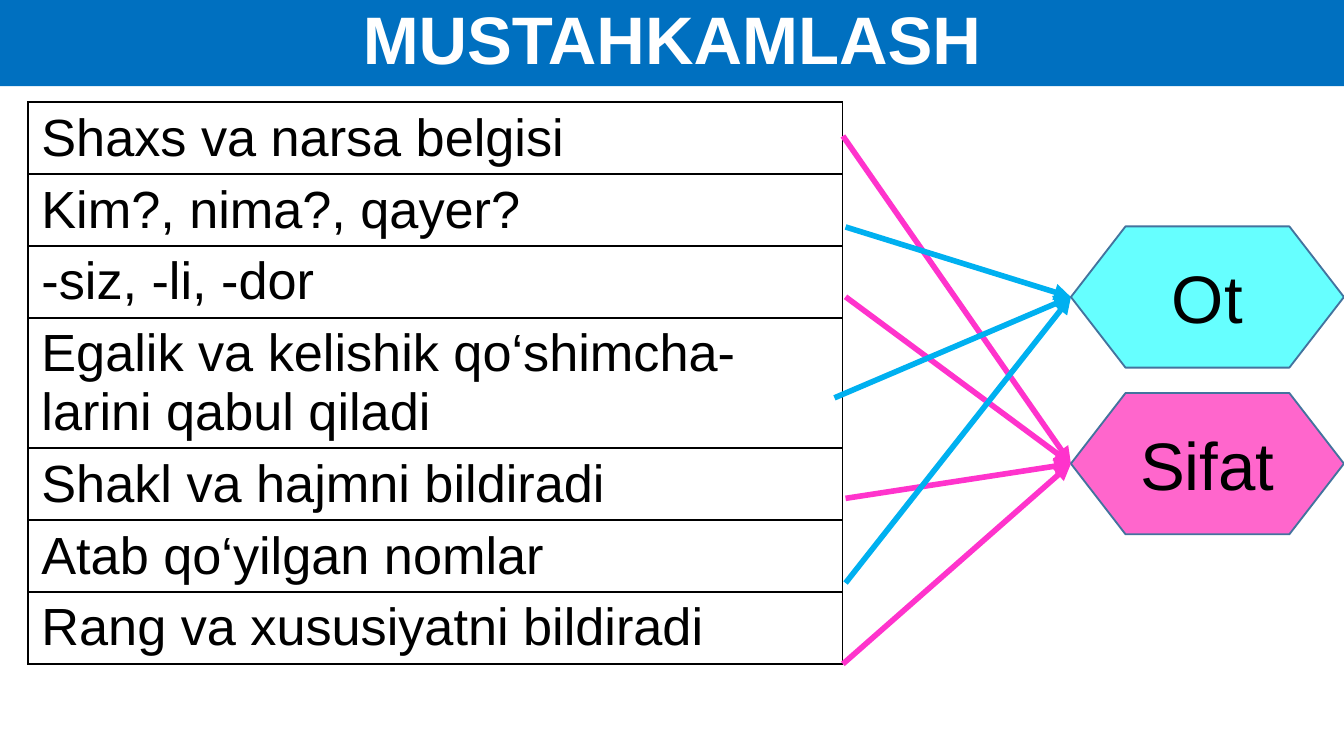
"""Build the MUSTAHKAMLASH matching exercise slide."""
from lxml import etree
from pptx import Presentation
from pptx import util as u
from pptx.dml.color import RGBColor
from pptx.enum import shapes, text
from pptx.oxml import ns

WHITE = RGBColor(0xFF, 0xFF, 0xFF)
BLACK = RGBColor(0, 0, 0)
BLUE = RGBColor(0x00, 0x70, 0xC0)
SKY = RGBColor(0x00, 0xB0, 0xF0)
PINK = RGBColor(0xFF, 0x33, 0xCC)
CYAN = RGBColor(0x66, 0xFF, 0xFF)
ROSE = RGBColor(0xFF, 0x66, 0xCC)
OUTLINE = RGBColor(0x43, 0x73, 0x9E)

ROW, TALL_ROW = 1.36, 2.46
CLUES = [
    ("Shaxs va narsa belgisi", ROW),
    ("Kim?, nima?, qayer?", ROW),
    ("-siz, -li, -dor", ROW),
    ("Egalik va kelishik qo‘shimcha-larini qabul qiladi", TALL_ROW),
    ("Shakl va hajmni bildiradi", ROW),
    ("Atab qo‘yilgan nomlar", ROW),
    ("Rang va xususiyatni bildiradi", ROW),
]
WORD_LEFT, WORD_WIDTH, WORD_HEIGHT = 20.24, 5.16, 2.67
WORDS = [("Ot", 4.28, CYAN), ("Sifat", 7.43, ROSE)]
NOUN, ADJECTIVE = [(WORD_LEFT, top + WORD_HEIGHT / 2) for _, top, _ in WORDS]
MATCHES = [
    ((15.93, 2.57), ADJECTIVE, PINK),
    ((15.98, 4.29), NOUN, SKY),
    ((15.98, 5.61), ADJECTIVE, PINK),
    ((15.77, 7.52), NOUN, SKY),
    ((15.98, 9.42), ADJECTIVE, PINK),
    ((15.98, 11.02), NOUN, SKY),
    ((15.93, 12.55), ADJECTIVE, PINK),
]


def write(frame, words, size=28, color=BLACK, bold=False, align=None, spacing=None):
    para = frame.paragraphs[0]
    para.alignment = align
    para.line_spacing = spacing
    span = para.add_run()
    span.text = words
    span.font.name = "Arial"
    span.font.size = u.Pt(size)
    span.font.bold = bold
    span.font.color.rgb = color


class Painter:
    def __init__(self, page, border=1, arrow=3):
        self.page = page
        self.border = border
        self.arrow_width = arrow

    def shape(self, kind, place, fill, words, line=None, **style):
        box = self.page.shapes.add_shape(kind, *map(u.Cm, place))
        box.shadow.inherit = False
        box.fill.solid()
        box.fill.fore_color.rgb = fill
        if line is None:
            box.line.fill.background()
        else:
            box.line.color.rgb = line
            box.line.width = u.Pt(self.border)
        box.text_frame.word_wrap = True
        box.text_frame.vertical_anchor = text.MSO_ANCHOR.MIDDLE
        write(box.text_frame, words, size=36, align=text.PP_ALIGN.CENTER, **style)

    def table(self, left, top, width, rows):
        height = sum(size for _, size in rows)
        place = map(u.Cm, (left, top, width, height))
        grid = self.page.shapes.add_table(len(rows), 1, *place).table
        grid.first_row = grid.horz_banding = False
        for index, (words, size) in enumerate(rows):
            grid.rows[index].height = u.Cm(size)
            cell = grid.cell(index, 0)
            write(cell.text_frame, words)
            self.frame_cell(cell)

    def frame_cell(self, cell):
        props = cell._tc.get_or_add_tcPr()
        for side in ("lnL", "lnR", "lnT", "lnB"):
            edge = etree.SubElement(props, ns.qn(f"a:{side}"), w=str(u.Pt(self.border)))
            fill = etree.SubElement(edge, ns.qn("a:solidFill"))
            etree.SubElement(fill, ns.qn("a:srgbClr"), val=str(BLACK))
        cell.fill.background()

    def arrow(self, start, end, color):
        points = map(u.Cm, (*start, *end))
        line = self.page.shapes.add_connector(shapes.MSO_CONNECTOR.STRAIGHT, *points)
        line.line.color.rgb = color
        line.line.width = u.Pt(self.arrow_width)
        etree.SubElement(line.line._get_or_add_ln(), ns.qn("a:tailEnd"), type="triangle")
        etree.SubElement(line._element.spPr, ns.qn("a:effectLst"))


def main():
    deck = Presentation()
    deck.slide_width, deck.slide_height = u.Cm(25.4), u.Cm(14.29)
    painter = Painter(deck.slides.add_slide(deck.slide_layouts[6]))
    painter.shape(shapes.MSO_SHAPE.RECTANGLE, (0, 0, 25.4, 1.63), BLUE,
                  "MUSTAHKAMLASH", color=WHITE, bold=True, spacing=0.9)
    painter.table(0.53, 1.93, 15.39, CLUES)
    *behind, front = MATCHES
    for match in behind:
        painter.arrow(*match)
    for word, top, fill in WORDS:
        painter.shape(shapes.MSO_SHAPE.FLOWCHART_PREPARATION,
                      (WORD_LEFT, top, WORD_WIDTH, WORD_HEIGHT), fill, word, line=OUTLINE)
    painter.arrow(*front)
    deck.save("out.pptx")


if __name__ == "__main__":
    main()
